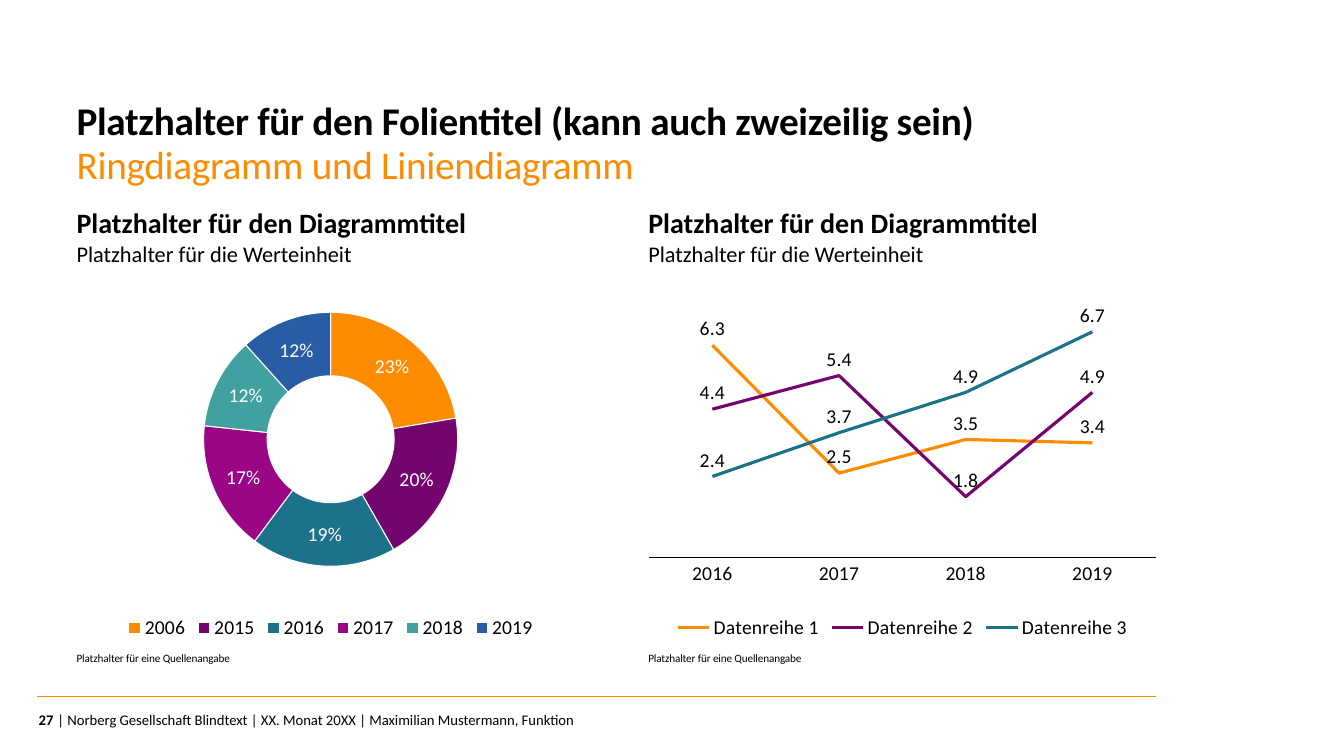
from lxml import etree
from pptx import Presentation
from pptx.chart.data import CategoryChartData
from pptx.dml.color import RGBColor
from pptx.enum.chart import XL_CHART_TYPE, XL_LABEL_POSITION, XL_LEGEND_POSITION, XL_TICK_MARK
from pptx.enum.shapes import MSO_CONNECTOR
from pptx.enum.text import MSO_ANCHOR, PP_ALIGN
from pptx.oxml.ns import qn
from pptx.util import Pt

PX = 9144  # 100 px to the inch
FONT = "Calibri"
BLACK = RGBColor(0x00, 0x00, 0x00)
WHITE = RGBColor(0xFF, 0xFF, 0xFF)
ORANGE = RGBColor(0xFF, 0x8C, 0x00)
PURPLE = RGBColor(0x74, 0x05, 0x6F)
PETROL = RGBColor(0x1D, 0x72, 0x8A)
MAGENTA = RGBColor(0x9B, 0x06, 0x87)
TEAL = RGBColor(0x41, 0xA0, 0xA0)
BLUE = RGBColor(0x28, 0x5D, 0xA6)
TOP, MIDDLE, BOTTOM = MSO_ANCHOR.TOP, MSO_ANCHOR.MIDDLE, MSO_ANCHOR.BOTTOM
LEFT, RIGHT = PP_ALIGN.LEFT, PP_ALIGN.RIGHT
LEFT_COLUMN, RIGHT_COLUMN, COLUMN_WIDTH = 76, 643, 504
CHART_TOP, CHART_HEIGHT = 273, 366

presentation = Presentation()
presentation.slide_width = 1333 * PX
presentation.slide_height = 750 * PX
slide = presentation.slides.add_slide(presentation.slide_layouts[6])


def add_text(text, left, top, width, height, size, color=BLACK, bold=False,
             anchor=TOP, align=LEFT, line_spacing=1.0, tracking=0):
    box = slide.shapes.add_textbox(left * PX, top * PX, width * PX, height * PX)
    frame = box.text_frame
    frame.word_wrap = True
    frame.vertical_anchor = anchor
    frame.margin_left = frame.margin_top = frame.margin_right = frame.margin_bottom = 0
    paragraph = frame.paragraphs[0]
    paragraph.text = text
    paragraph.alignment = align
    paragraph.line_spacing = line_spacing
    paragraph.font.name = FONT
    paragraph.font.size = Pt(size)
    paragraph.font.bold = bold
    paragraph.font.color.rgb = color
    if tracking:
        paragraph._p.pPr.find(qn("a:defRPr")).set("spc", str(tracking))


def add_chart(kind, left, categories, series_values, plot_area):
    data = CategoryChartData()
    data.categories = categories
    for name, values in series_values:
        data.add_series(name, values)
    chart = slide.shapes.add_chart(kind, left * PX, CHART_TOP * PX,
                                   COLUMN_WIDTH * PX, CHART_HEIGHT * PX, data).chart
    chart.has_title = False
    chart.font.name = FONT
    chart.font.size = Pt(14)
    chart.font.color.rgb = BLACK
    chart.has_legend = True
    chart.legend.position = XL_LEGEND_POSITION.BOTTOM
    chart.legend.include_in_layout = False
    # Fixed inner plot area, as fractions of the chart
    area = chart._chartSpace.chart.plotArea
    for layout in area.findall(qn("c:layout")):
        area.remove(layout)
    layout = etree.Element(qn("c:layout"))
    area.insert(0, layout)
    manual = etree.SubElement(layout, qn("c:manualLayout"))
    settings = [("layoutTarget", "inner"), ("xMode", "edge"), ("yMode", "edge")]
    for tag, value in settings + list(zip("xywh", plot_area)):
        etree.SubElement(manual, qn(f"c:{tag}")).set("val", str(value))
    return chart


# Footer
rule = slide.shapes.add_connector(MSO_CONNECTOR.STRAIGHT, 37 * PX, 691 * PX, 1147 * PX, 691 * PX)
rule.line.color.rgb = ORANGE
rule.line.width = Pt(1)
etree.SubElement(rule._element.spPr, qn("a:effectLst"))
add_text("| Norberg Gesellschaft Blindtext | XX. Monat 20XX | Maximilian Mustermann, Funktion",
         57, 705, 1087, 18, 10.5, anchor=MIDDLE)
add_text("27", 22, 705, 31, 18, 10.5, bold=True, anchor=MIDDLE, align=RIGHT)

# Slide title
add_text("Platzhalter für den Folientitel (kann auch zweizeilig sein)",
         LEFT_COLUMN, 99, 1071, 45, 28, bold=True, line_spacing=0.95, tracking=-20)
add_text("Ringdiagramm und Liniendiagramm",
         LEFT_COLUMN, 143, 1071, 45, 28, color=ORANGE, line_spacing=0.95, tracking=-20)

# Chart headings and sources
for column in (LEFT_COLUMN, RIGHT_COLUMN):
    add_text("Platzhalter für den Diagrammtitel", column, 202, COLUMN_WIDTH, 34, 20,
             bold=True, line_spacing=1.05)
    add_text("Platzhalter für die Werteinheit", column, 237, COLUMN_WIDTH, 27, 16,
             line_spacing=1.05)
    add_text("Platzhalter für eine Quellenangabe", column, 645, COLUMN_WIDTH, 14, 8,
             anchor=BOTTOM, line_spacing=1.05, tracking=-10)

# Doughnut chart
doughnut = add_chart(XL_CHART_TYPE.DOUGHNUT, LEFT_COLUMN,
                     ["2006", "2015", "2016", "2017", "2018", "2019"],
                     [("Series 1", (0.23, 0.2, 0.19, 0.17, 0.12, 0.12))],
                     (0.25, 0.06, 0.5, 0.77))
ring = doughnut.plots[0]
ring._element.find(qn("c:holeSize")).set("val", "65")
for index, color in enumerate((ORANGE, PURPLE, PETROL, MAGENTA, TEAL, BLUE)):
    segment = ring.series[0].points[index].format
    segment.fill.solid()
    segment.fill.fore_color.rgb = color
    segment.line.color.rgb = WHITE
    segment.line.width = Pt(0.75)
ring.has_data_labels = True
labels = ring.data_labels
labels.show_value = True
labels.show_percentage = False
labels.number_format = "0%"
labels.number_format_is_linked = False
labels.font.name = FONT
labels.font.size = Pt(14)
labels.font.color.rgb = WHITE

# Line chart
line_chart = add_chart(XL_CHART_TYPE.LINE, RIGHT_COLUMN, ["2016", "2017", "2018", "2019"],
                       [("Datenreihe 1", (6.3, 2.5, 3.5, 3.4)),
                        ("Datenreihe 2", (4.4, 5.4, 1.8, 4.9)),
                        ("Datenreihe 3", (2.4, 3.7, 4.9, 6.7))],
                       (0, 0.035, 1, 0.73))
for series, color in zip(line_chart.plots[0].series, (ORANGE, PURPLE, PETROL)):
    series.smooth = False
    series.format.line.color.rgb = color
    series.format.line.width = Pt(2.25)
    labels = series.data_labels
    labels.show_value = True
    labels.position = XL_LABEL_POSITION.ABOVE
    labels.number_format = "0.0"
    labels.number_format_is_linked = False
value_axis = line_chart.value_axis
value_axis.minimum_scale = 0
value_axis.maximum_scale = 8
value_axis.major_unit = 2
value_axis.has_major_gridlines = False
value_axis.visible = False
category_axis = line_chart.category_axis
category_axis.major_tick_mark = XL_TICK_MARK.NONE
category_axis.format.line.color.rgb = BLACK
category_axis.format.line.width = Pt(1)

presentation.save("out.pptx")
